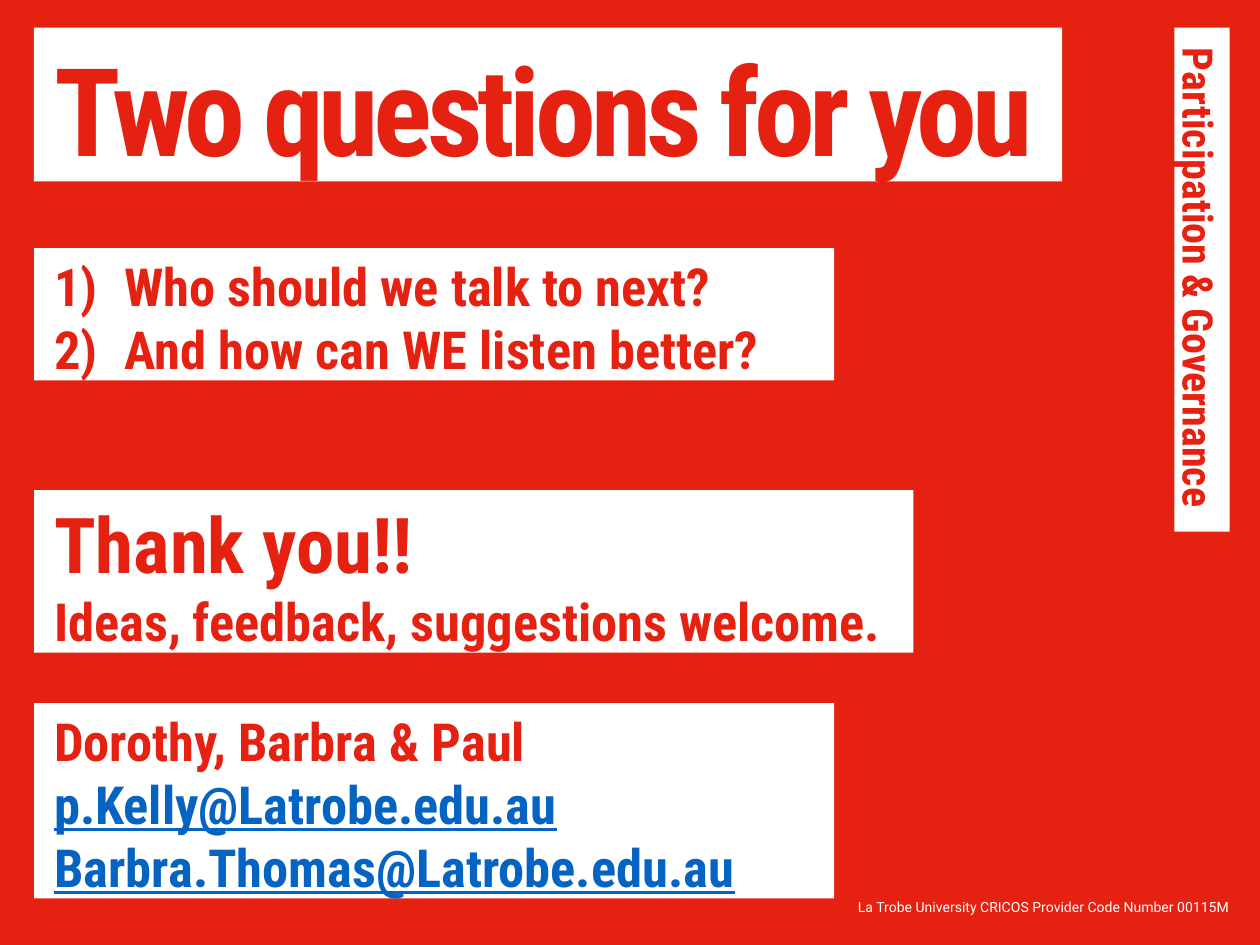
import pptx
import pptx.dml.color
import pptx.enum.shapes
import pptx.enum.text
import pptx.oxml.ns
import pptx.util
from pptx.util import Inches

RED = "E52212"
WHITE = "FFFFFF"
LINK_BLUE = "0563C1"
LEFT = 0.27


def color(hex_string):
    return pptx.dml.color.RGBColor.from_string(hex_string)


def format_font(font, size, hex_string, name="Roboto Condensed", bold=True):
    font.name = name
    font.size = pptx.util.Pt(size)
    font.bold = bold
    font.color.rgb = color(hex_string)


def set_frame(text_frame, margins, wrap=True):
    text_frame.word_wrap = wrap
    text_frame.auto_size = pptx.enum.text.MSO_AUTO_SIZE.SHAPE_TO_FIT_TEXT
    (text_frame.margin_left, text_frame.margin_top,
     text_frame.margin_right, text_frame.margin_bottom) = map(Inches, margins)


def add_panel(slide, left, top, width, height, lines, wrap=True):
    """Add a white panel of (text, size) paragraphs and return its shape."""
    shape = slide.shapes.add_shape(
        pptx.enum.shapes.MSO_SHAPE.RECTANGLE,
        Inches(left), Inches(top), Inches(width), Inches(height))
    shape.shadow.inherit = False
    shape.fill.solid()
    shape.fill.fore_color.rgb = color(WHITE)
    shape.line.fill.background()
    text_frame = shape.text_frame
    set_frame(text_frame, (0.16, 0.04, 0.16, 0), wrap)
    text_frame.vertical_anchor = pptx.enum.text.MSO_ANCHOR.MIDDLE
    text_frame.text = "\n".join(text for text, size in lines)
    for paragraph, (text, size) in zip(text_frame.paragraphs, lines):
        paragraph.alignment = pptx.enum.text.PP_ALIGN.LEFT
        for run in paragraph.runs:
            format_font(run.font, size, RED)
    return shape


def number_paragraphs(text_frame, indent):
    for paragraph in text_frame.paragraphs:
        properties = paragraph._p.get_or_add_pPr()
        properties.set("marL", str(Inches(indent)))
        properties.set("indent", str(-Inches(indent)))
        numbering = properties.makeelement(
            pptx.oxml.ns.qn("a:buAutoNum"), {"type": "arabicParenR"})
        properties.append(numbering)


def style_as_link(run):
    run.font.color.rgb = color(LINK_BLUE)
    run.font.underline = True


def add_footer(slide, text):
    text_box = slide.shapes.add_textbox(
        Inches(6.08), Inches(7.08), Inches(3.88), Inches(0.24))
    set_frame(text_box.text_frame, (0.16, 0.05, 0.2, 0.05))
    text_box.text_frame.text = text
    paragraph = text_box.text_frame.paragraphs[0]
    paragraph.alignment = pptx.enum.text.PP_ALIGN.RIGHT
    format_font(paragraph.runs[0].font, 8, WHITE, "Roboto", bold=False)


def main():
    presentation = pptx.Presentation()
    presentation.slide_width = Inches(10)
    presentation.slide_height = Inches(7.5)
    slide = presentation.slides.add_slide(presentation.slide_layouts[6])
    slide.background.fill.solid()
    slide.background.fill.fore_color.rgb = color(RED)

    add_footer(slide, "La Trobe University CRICOS Provider Code Number 00115M")

    questions = add_panel(slide, LEFT, 1.97, 6.35, 1.05, [
        ("Who should we talk to next?", 30),
        ("And how can WE listen better?", 30)])
    number_paragraphs(questions.text_frame, 0.56)

    add_panel(slide, LEFT, 3.89, 6.98, 1.29, [
        ("Thank you!!", 44),
        ("Ideas, feedback, suggestions welcome.", 30)])

    heading = add_panel(slide, LEFT, 0.22, 8.16, 1.22,
                        [("Two questions for you", 70)], wrap=False)
    heading_paragraph = heading.text_frame.paragraphs[0]
    heading_paragraph.space_after = pptx.util.Pt(15)
    heading_paragraph.runs[0]._r.get_or_add_rPr().set("spc", "-300")

    contacts = add_panel(slide, LEFT, 5.58, 6.35, 1.55, [
        ("Dorothy, Barbra & Paul\vp.Kelly@Latrobe.edu.au", 30),
        ("Barbra.Thomas@Latrobe.edu.au", 30)])
    for paragraph in contacts.text_frame.paragraphs:
        style_as_link(paragraph.runs[-1])

    section_label = add_panel(slide, 7.54, 2, 4, 0.44,
                              [("Participation & Governance", 24)], wrap=False)
    section_label.rotation = 90

    presentation.save("out.pptx")


if __name__ == "__main__":
    main()
